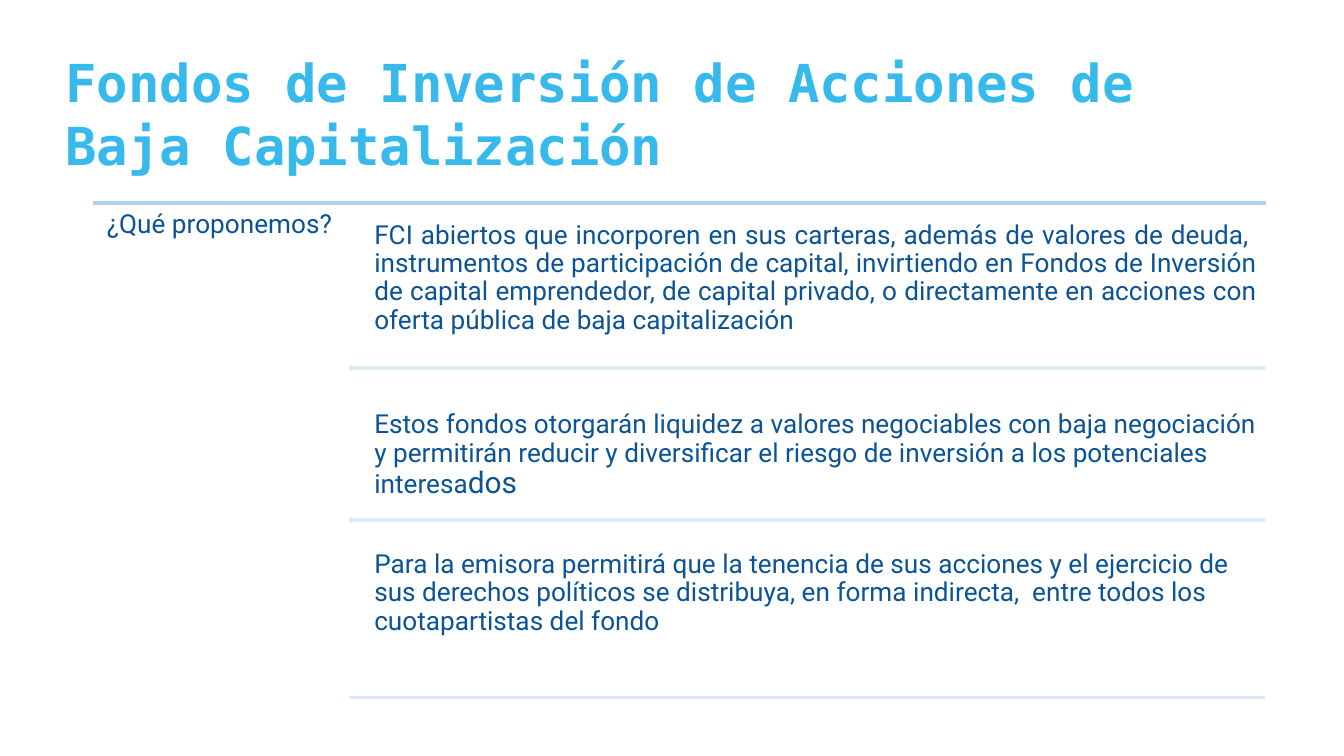
import pptx
import pptx.dml.color
import pptx.enum.shapes
import pptx.enum.text
import pptx.util
from lxml import etree

PX = 4572  # 200 px to the inch
THEME = {
    "title_font": "DejaVu Sans Mono", "body_font": "Roboto",
    "title_size": 28, "body_size": 14, "large_size": 16, "line_width": 2,
    "title": "37B9EC", "body": "0B5394", "top_rule": "B2CFEB", "rule": "DDE9F5",
}
ALIGN = pptx.enum.text.PP_ALIGN


def add_text(s, box, runs, font, color, inset, bold=False, spacing=None, align=ALIGN.LEFT):
    tf = s.shapes.add_textbox(*[v * PX for v in box]).text_frame
    tf.word_wrap = True
    tf.vertical_anchor = pptx.enum.text.MSO_ANCHOR.TOP
    tf.margin_left = tf.margin_right = tf.margin_top = tf.margin_bottom = inset * PX
    p = tf.paragraphs[0]
    p.alignment = align
    p.line_spacing = spacing
    for text, size in runs:
        r = p.add_run()
        r.text = text
        r.font.name = font
        r.font.size = pptx.util.Pt(size)
        r.font.bold = bold
        r.font.color.rgb = pptx.dml.color.RGBColor.from_string(color)


def add_rule(s, left, right, y, color):
    line = s.shapes.add_connector(
        pptx.enum.shapes.MSO_CONNECTOR.STRAIGHT, left * PX, y * PX, right * PX, y * PX)
    line.line.color.rgb = pptx.dml.color.RGBColor.from_string(color)
    line.line.width = pptx.util.Pt(THEME["line_width"])
    etree.SubElement(line._element.spPr, pptx.oxml.ns.qn("a:effectLst"))


prs = pptx.Presentation()
prs.slide_width, prs.slide_height = 2000 * PX, 1125 * PX
s = prs.slides.add_slide(prs.slide_layouts[6])

# Title
add_text(s, (78, 55, 1806, 134),
         [("Fondos de Inversión de Acciones de Baja Capitalización", THEME["title_size"])],
         THEME["title_font"], THEME["title"], 20, bold=True)

# Question column
add_rule(s, 139, 1884, 302, THEME["top_rule"])
add_text(s, (147, 302, 380, 752), [("¿Qué proponemos?", THEME["body_size"])],
         THEME["body_font"], THEME["body"], 12, spacing=0.9)

# Proposals: top, height, alignment, y of the rule below, runs
proposals = [
    (318, 266, ALIGN.JUSTIFY, 548, [
        ("FCI abiertos que incorporen en sus carteras, además de valores de deuda,  "
         "instrumentos de participación de capital, invirtiendo en Fondos de Inversión "
         "de capital emprendedor, de capital privado, o directamente en acciones con "
         "oferta pública de baja capitalización", THEME["body_size"])]),
    (600, 220, ALIGN.LEFT, 774, [
        ("Estos fondos otorgarán liquidez a valores negociables con baja negociación "
         "y permitirán reducir y diversificar el riesgo de inversión a los potenciales "
         "interesa", THEME["body_size"]),
        ("dos", THEME["large_size"])]),
    (808, 200, ALIGN.LEFT, 1038, [
        ("Para la emisora permitirá que la tenencia de sus acciones y el ejercicio de "
         "sus derechos políticos se distribuya, en forma indirecta,  entre todos los "
         "cuotapartistas del fondo", THEME["body_size"])]),
]
for top, height, align, rule_y, runs in proposals:
    add_text(s, (545, top, 1338, height), runs, THEME["body_font"], THEME["body"], 12,
             spacing=0.9, align=align)
    add_rule(s, 520, 1882, rule_y, THEME["rule"])

prs.save("out.pptx")
